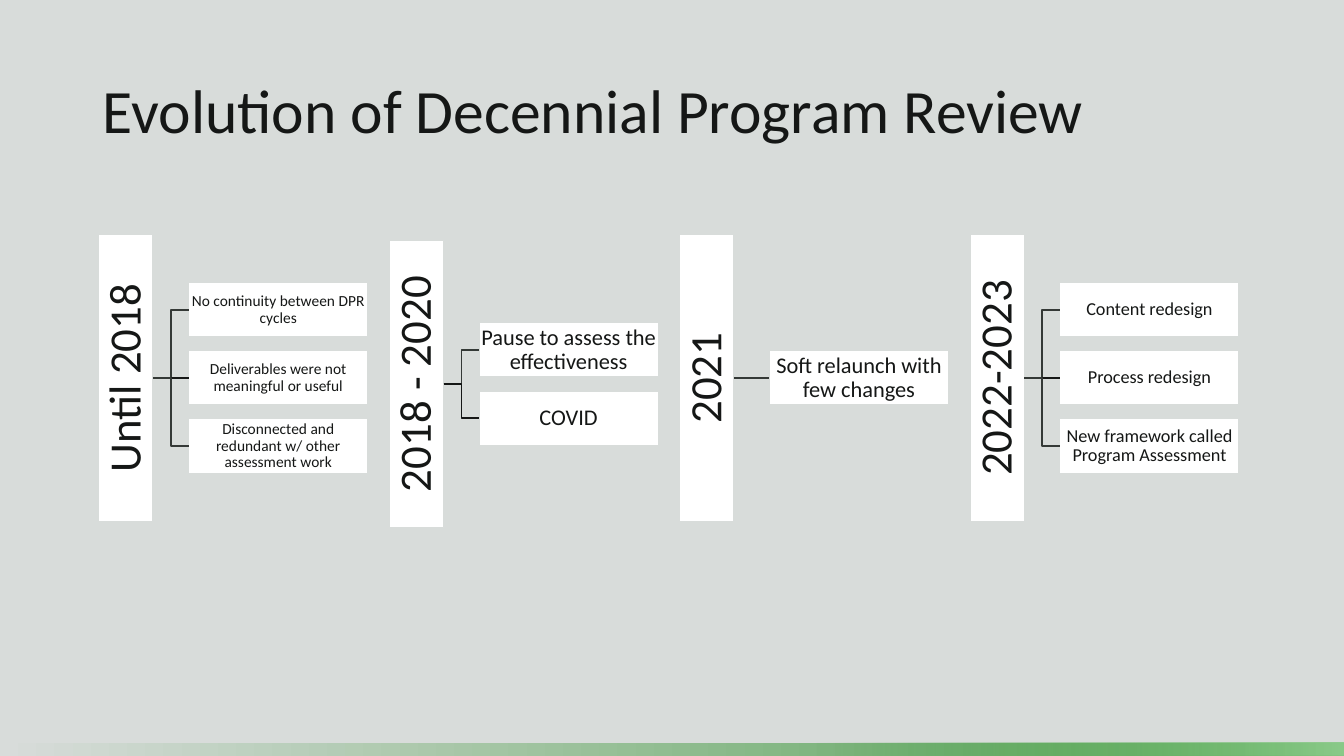
"""Build the slide showing the evolution of the decennial program review."""
from lxml.etree import SubElement
from pptx import Presentation
from pptx.dml.color import RGBColor
from pptx.enum.shapes import MSO_CONNECTOR as Connector, MSO_SHAPE as Shape
from pptx.enum.text import MSO_ANCHOR as Anchor, PP_ALIGN as Align
from pptx.oxml.ns import qn
from pptx.util import Inches, Pt

BACKGROUND = RGBColor(0xD8, 0xDC, 0xDA)
INK = RGBColor(0x15, 0x17, 0x16)
GREY = RGBColor(0x34, 0x39, 0x36)
WHITE = RGBColor(0xFF, 0xFF, 0xFF)
GREEN = RGBColor(0x48, 0x9D, 0x46)
LIGHT_GREEN = RGBColor(0x8B, 0xCB, 0x8A)

FONT = "Calibri"
WIDTH, HEIGHT = 13.33, 7.5
LEFT, COLUMN_PITCH = 0.98, 2.88
YEAR_WIDTH, YEAR_HEIGHT = 0.54, 2.85
BOX_OFFSET, BOX_WIDTH, BOX_HEIGHT, ROW_PITCH = 0.89, 1.78, 0.54, 0.675
STRIP_HEIGHT = 0.13

PERIODS = [
    ("Until 2018", 3.75, 11, [
        "No continuity between DPR cycles",
        "Deliverables were not meaningful or useful",
        "Disconnected and redundant w/ other assessment work"]),
    ("2018 - 2020", 3.81, 16, ["Pause to assess the effectiveness", "COVID"]),
    ("2021", 3.75, 16, ["Soft relaunch with few changes"]),
    ("2022-2023", 3.75, 13, [
        "Content redesign",
        "Process redesign",
        "New framework called Program Assessment"]),
]


def write_text(shape, text, size, align):
    """Set the single paragraph of a shape, centred vertically."""
    frame = shape.text_frame
    frame.text = text
    frame.word_wrap = True
    frame.vertical_anchor = Anchor.MIDDLE
    paragraph = frame.paragraphs[0]
    paragraph.alignment = align
    paragraph.line_spacing = 0.9
    font = paragraph.runs[0].font
    font.name, font.size = FONT, Pt(size)
    font.color.rgb = INK


def add_title(slide, text):
    """Add the heading of the slide."""
    title = slide.shapes.add_textbox(Inches(0.92), Inches(0.4), Inches(11.5), Inches(1.45))
    write_text(title, text, 44, Align.LEFT)


def add_rectangle(slide, left, top, width, height):
    """Add a rectangle without shadow."""
    shape = slide.shapes.add_shape(
        Shape.RECTANGLE, Inches(left), Inches(top), Inches(width), Inches(height))
    shape.shadow.inherit = False
    return shape


def add_card(slide, left, middle, width, height, text, size, inset):
    """Add a white text card centred on a height."""
    card = add_rectangle(slide, left, middle - height / 2, width, height)
    card.fill.solid()
    card.fill.fore_color.rgb = WHITE
    card.line.color.rgb = BACKGROUND
    card.line.width = Pt(1)
    frame = card.text_frame
    frame.margin_left = frame.margin_right = Inches(inset)
    frame.margin_top = frame.margin_bottom = Inches(inset)
    write_text(card, text, size, Align.CENTER)
    return card


def add_link(slide, year, box, kind, color):
    """Join the right side of a year to the left side of a box."""
    link = slide.shapes.add_connector(kind, 0, 0, 0, 0)
    link.begin_connect(year, 3)
    link.end_connect(box, 1)
    link.line.color.rgb = color
    link.line.width = Pt(1)
    SubElement(link.element.spPr, qn("a:effectLst"))


def add_period(slide, column, label, middle, size, entries):
    """Add a year with its boxes and the links between them."""
    left = LEFT + column * COLUMN_PITCH
    year = add_card(slide, left, middle, YEAR_WIDTH, YEAR_HEIGHT, label, 32, 0.02)
    year.text_frame._txBody.bodyPr.set("vert", "vert270")
    for row, entry in enumerate(entries):
        offset = row - (len(entries) - 1) / 2
        box = add_card(slide, left + BOX_OFFSET, middle + offset * ROW_PITCH,
                       BOX_WIDTH, BOX_HEIGHT, entry, size, 0.01)
        kind = Connector.ELBOW if offset else Connector.STRAIGHT
        add_link(slide, year, box, kind, INK if row % 2 else GREY)


def add_strip(slide, left, start, end, start_position=0.0, start_clear=False):
    """Add a gradient strip from a left edge to the lower right corner."""
    strip = add_rectangle(slide, left, HEIGHT - STRIP_HEIGHT, WIDTH - left, STRIP_HEIGHT)
    strip.line.fill.background()
    strip.fill.gradient()
    strip.fill.gradient_angle = 0
    stops = strip.fill.gradient_stops
    for stop, color, position in zip(stops, (start, end), (start_position, 1.0)):
        stop.color.rgb = color
        stop.position = position
    if start_clear:
        first_color = next(strip.element.spPr.iter(qn("a:srgbClr")))
        SubElement(first_color, qn("a:alpha"), val="0")


def main():
    """Build and save the slide."""
    presentation = Presentation()
    presentation.slide_width, presentation.slide_height = Inches(WIDTH), Inches(HEIGHT)
    slide = presentation.slides.add_slide(presentation.slide_layouts[6])
    slide.background.fill.solid()
    slide.background.fill.fore_color.rgb = BACKGROUND
    add_strip(slide, 0, BACKGROUND, GREEN)
    add_strip(slide, 6.86, GREEN, LIGHT_GREEN, 0.19, True)
    add_title(slide, "Evolution of Decennial Program Review")
    for column, period in enumerate(PERIODS):
        add_period(slide, column, *period)
    presentation.save("out.pptx")


if __name__ == "__main__":
    main()
